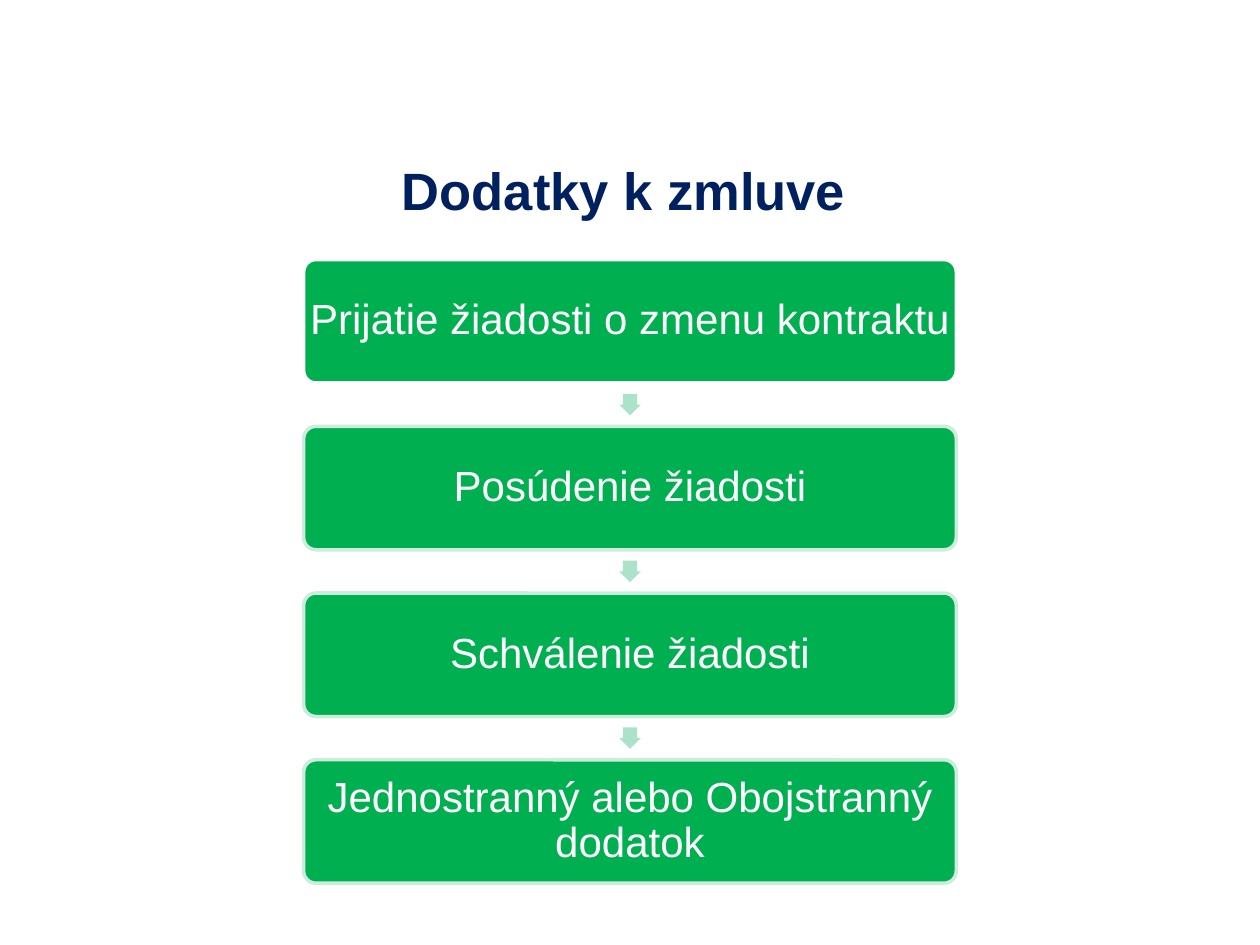
from dataclasses import dataclass

import pptx
import pptx.dml.color
import pptx.enum.shapes
import pptx.enum.text
import pptx.util
from pptx.util import Inches

MSO_SHAPE = pptx.enum.shapes.MSO_SHAPE


@dataclass(frozen=True)
class Theme:
    font: str = "Arial"
    title_color: str = "002060"
    step_fill: str = "00B050"
    step_text: str = "FFFFFF"
    first_outline: str = "FFFFFF"
    step_outline: str = "CCECDE"
    arrow_fill: str = "ABE2CA"
    title_size: int = 30
    step_size: int = 24
    outline_width: int = 2


THEME = Theme()
STEPS = [
    "Prijatie žiadosti o zmenu kontraktu",
    "Posúdenie žiadosti",
    "Schválenie žiadosti",
    "Jednostranný alebo Obojstranný dodatok",
]


def rgb(value):
    return pptx.dml.color.RGBColor.from_string(value)


def set_text(shape, text, size, color, bold=False):
    """Write one centred paragraph in the middle of the shape."""
    frame = shape.text_frame
    frame.text = text
    frame.word_wrap = True
    frame.vertical_anchor = pptx.enum.text.MSO_ANCHOR.MIDDLE
    paragraph = frame.paragraphs[0]
    paragraph.alignment = pptx.enum.text.PP_ALIGN.CENTER
    font = paragraph.runs[0].font
    font.name = THEME.font
    font.size = pptx.util.Pt(size)
    font.bold = bold
    font.color.rgb = rgb(color)
    return frame


def add_filled_shape(slide, kind, box, fill, outline=None):
    shape = slide.shapes.add_shape(kind, *box)
    shape.shadow.inherit = False
    shape.fill.solid()
    shape.fill.fore_color.rgb = rgb(fill)
    if outline:
        shape.line.color.rgb = rgb(outline)
        shape.line.width = pptx.util.Pt(THEME.outline_width)
    else:
        shape.line.fill.background()
    return shape


def add_title(slide, box, text):
    title = slide.shapes.add_textbox(*box)
    set_text(title, text, THEME.title_size, THEME.title_color, bold=True)


def add_step(slide, box, text, outline):
    step = add_filled_shape(slide, MSO_SHAPE.ROUNDED_RECTANGLE, box, THEME.step_fill, outline)
    step.adjustments[0] = 0.1
    frame = set_text(step, text, THEME.step_size, THEME.step_text)
    # The rounded corners already inset the text area.
    frame.margin_left = frame.margin_right = 0
    frame.margin_top = frame.margin_bottom = 0
    frame.paragraphs[0].line_spacing = 0.9


def add_process(slide, box, steps):
    """Stack the steps evenly in the box, with an arrow centred in each gap."""
    left, top, width, height = box
    step_height = Inches(0.98)
    arrow_size = Inches(0.17)
    pitch = (height - step_height) // (len(steps) - 1)
    gap = pitch - step_height
    for index, text in enumerate(steps):
        step_top = top + index * pitch
        if index:
            arrow_box = (left + (width - arrow_size) // 2,
                         step_top - (gap + arrow_size) // 2, arrow_size, arrow_size)
            arrow = add_filled_shape(slide, MSO_SHAPE.DOWN_ARROW, arrow_box, THEME.arrow_fill)
            arrow.adjustments[0] = 0.67
            arrow.adjustments[1] = 0.5
        outline = THEME.step_outline if index else THEME.first_outline
        add_step(slide, (left, step_top, width, step_height), text, outline)


def main():
    presentation = pptx.Presentation()
    presentation.slide_width = Inches(10)
    presentation.slide_height = Inches(7.5)
    slide = presentation.slides.add_slide(presentation.slide_layouts[6])
    add_title(slide, (Inches(0.7), Inches(1.23), Inches(8.5), Inches(0.55)), "Dodatky k zmluve")
    add_process(slide, (Inches(2.41), Inches(2.06), Inches(5.18), Inches(4.95)), STEPS)
    presentation.save("out.pptx")


if __name__ == "__main__":
    main()
